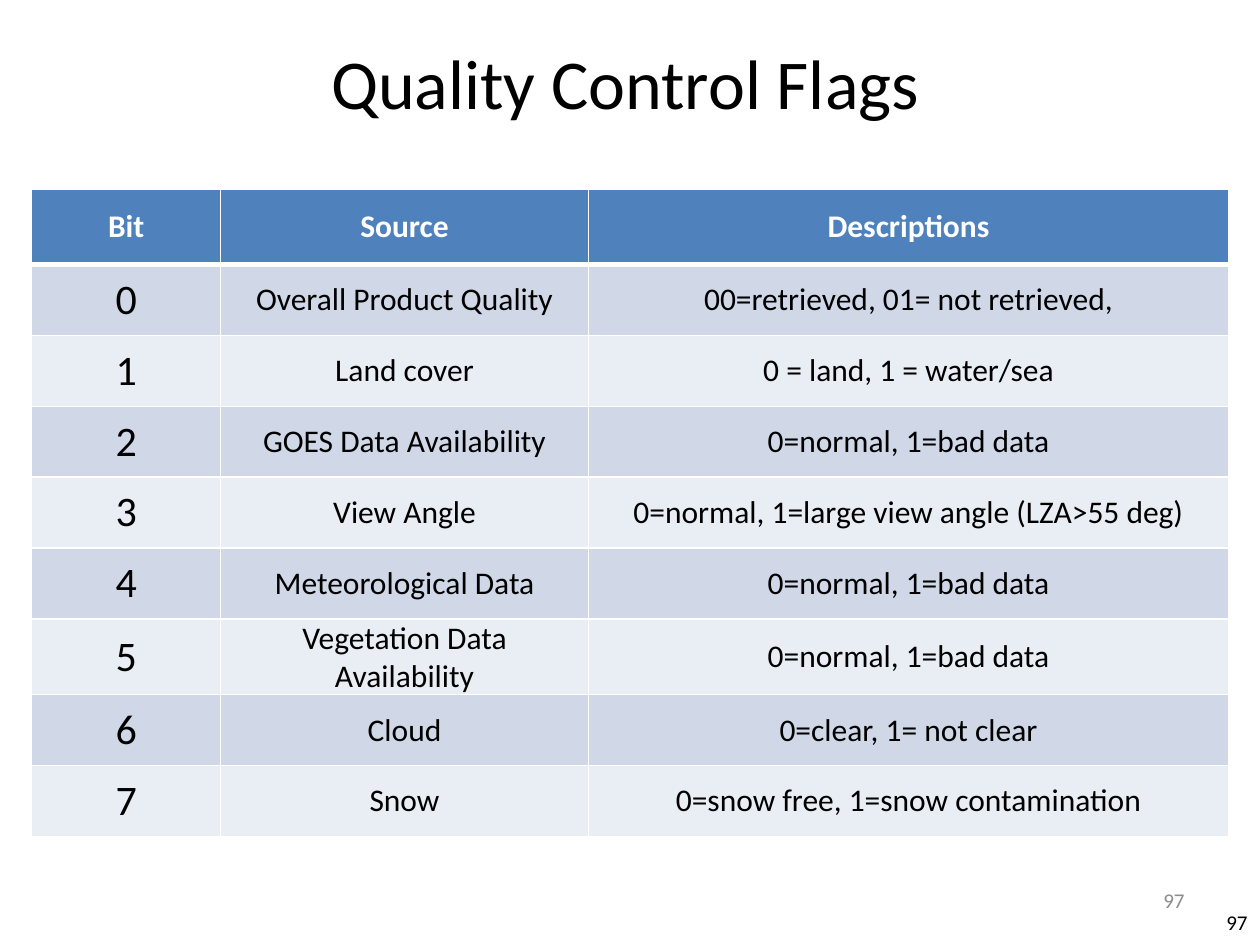
from lxml.etree import SubElement
from pptx import Presentation
from pptx.dml.color import RGBColor
from pptx.enum.text import MSO_ANCHOR, PP_ALIGN
from pptx.oxml.ns import qn
from pptx.util import Cm, Pt

TITLE = "Quality Control Flags"
PAGE = "97"
HEADER = ("Bit", "Source", "Descriptions")
FLAGS = [
    ("Overall Product Quality", "00=retrieved, 01= not retrieved,"),
    ("Land cover", "0 = land, 1 = water/sea"),
    ("GOES Data Availability", "0=normal, 1=bad data"),
    ("View Angle", "0=normal, 1=large view angle (LZA>55 deg)"),
    ("Meteorological Data", "0=normal, 1=bad data"),
    ("Vegetation Data Availability", "0=normal, 1=bad data"),
    ("Cloud", "0=clear, 1= not clear"),
    ("Snow", "0=snow free, 1=snow contamination"),
]
ROWS = [HEADER] + [(str(bit), *flag) for bit, flag in enumerate(FLAGS)]

FONT = "Calibri"
BLACK = RGBColor(0x00, 0x00, 0x00)
WHITE = RGBColor(0xFF, 0xFF, 0xFF)
GREY = RGBColor(0x8C, 0x8C, 0x8C)
HEADER_BLUE = RGBColor(0x4F, 0x81, 0xBD)
BANDS = (RGBColor(0xE9, 0xED, 0xF4), RGBColor(0xD0, 0xD8, 0xE8))

COL_WIDTHS = (3.81, 7.41, 12.91)
ROW_HEIGHT, TALL_HEIGHT = 1.43, 1.52
TALL_ROWS = (0, 6)


def format_text(tf, size, color, align, bold=False):
    p = tf.paragraphs[0]
    p.alignment = align
    font = p.runs[0].font
    font.name, font.size, font.bold = FONT, Pt(size), bold
    font.color.rgb = color
    return p


def add_borders(cell, **widths):
    """Draw white cell borders; widths in points by side L, R, T, B."""
    tcPr = cell._tc.get_or_add_tcPr()
    for side, width in widths.items():
        ln = SubElement(tcPr, qn(f"a:ln{side}"), w=str(Pt(width)))
        fill = SubElement(ln, qn("a:solidFill"))
        SubElement(fill, qn("a:srgbClr"), val=str(WHITE))


def add_page_number(slide, left, top, width, color):
    tf = slide.shapes.add_textbox(Cm(left), Cm(top), Cm(width), Cm(1.01)).text_frame
    tf.word_wrap = True
    tf.vertical_anchor = MSO_ANCHOR.MIDDLE
    tf.text = PAGE
    format_text(tf, 12, color, PP_ALIGN.RIGHT)


def add_flag_table(slide):
    heights = [TALL_HEIGHT if i in TALL_ROWS else ROW_HEIGHT for i in range(len(ROWS))]
    table = slide.shapes.add_table(
        len(ROWS), len(HEADER), Cm(0.64), Cm(3.81),
        Cm(sum(COL_WIDTHS)), Cm(sum(heights))).table
    for col, width in zip(table.columns, COL_WIDTHS):
        col.width = Cm(width)
    for row, height in zip(table.rows, heights):
        row.height = Cm(height)

    for i, row in enumerate(ROWS):
        head = i == 0
        for j, text in enumerate(row):
            cell = table.cell(i, j)
            cell.text = text
            cell.vertical_anchor = MSO_ANCHOR.MIDDLE
            add_borders(cell, L=1, R=1, T=3 if i == 1 else 1, B=3 if head else 1)
            cell.fill.solid()
            cell.fill.fore_color.rgb = HEADER_BLUE if head else BANDS[i % 2]
            size = 24 if j == 0 and not head else 18
            p = format_text(cell.text_frame, size, WHITE if head else BLACK,
                            PP_ALIGN.CENTER, bold=head)
            if j and not head:
                cell.margin_left = cell.margin_right = Cm(0.18)
                cell.margin_top = cell.margin_bottom = 0
                p.space_after = Pt(7.8)


def main():
    prs = Presentation()
    prs.slide_width, prs.slide_height = Cm(25.4), Cm(19.05)
    s = prs.slides.add_slide(prs.slide_layouts[5])

    add_page_number(s, 23.5, 18.08, 1.9, BLACK)

    title = s.shapes.title
    title.left, title.top, title.width, title.height = Cm(1.27), Cm(0.76), Cm(22.66), Cm(1.78)
    title.text_frame.text = TITLE
    title.text_frame.vertical_anchor = MSO_ANCHOR.MIDDLE
    format_text(title.text_frame, 40, BLACK, PP_ALIGN.CENTER)

    add_flag_table(s)
    add_page_number(s, 18.21, 17.65, 5.92, GREY)
    prs.save("out.pptx")


if __name__ == "__main__":
    main()
